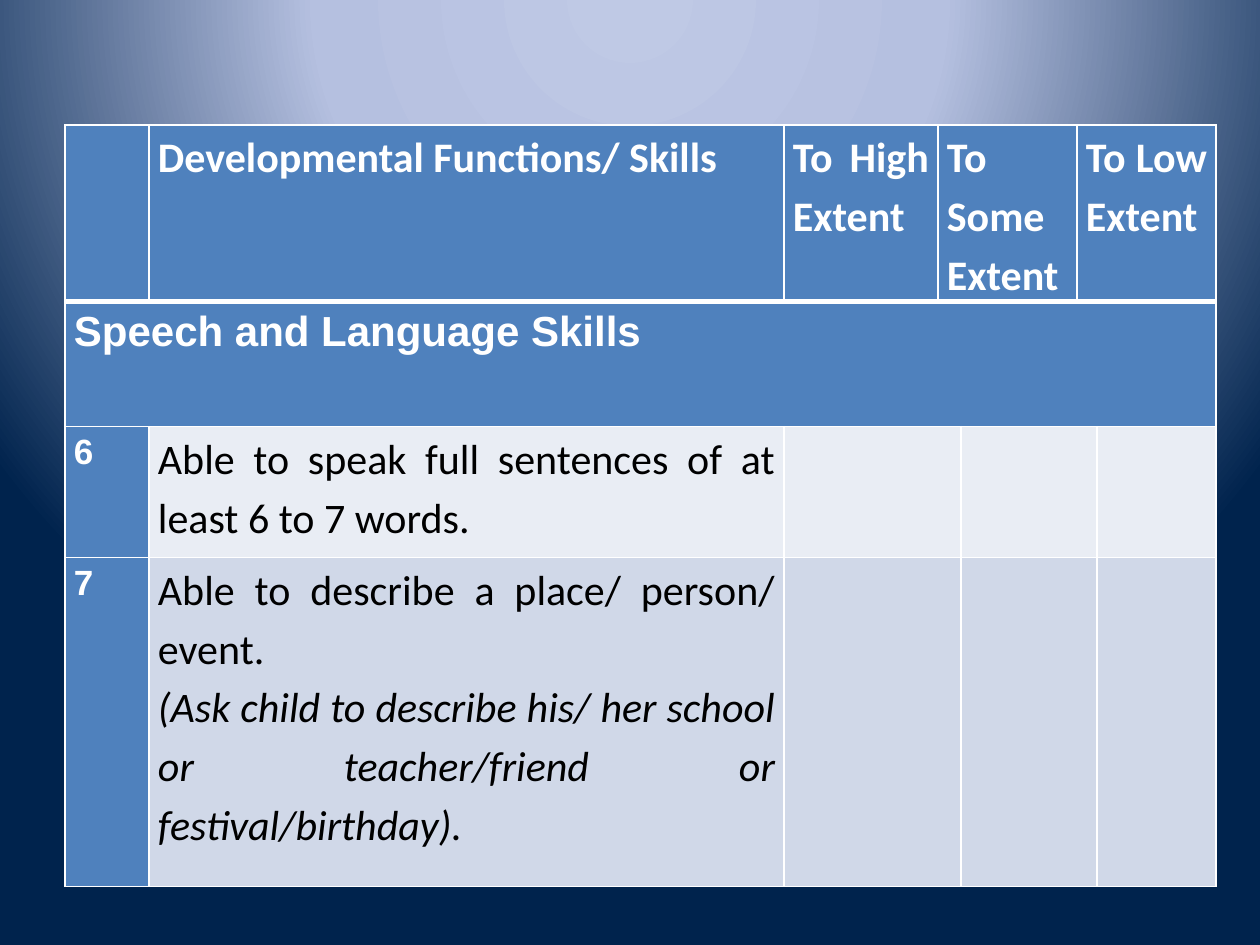
from pptx import Presentation
from pptx import util as u
from pptx.dml.color import RGBColor
from pptx.enum import text
from pptx.oxml import parse_xml
from pptx.oxml.ns import nsdecls

PX = u.Inches(1) / 126
THEME = {
    "white": "FFFFFF", "black": "000000", "blue": "4F81BD",
    "light": "E9EDF4", "mid": "D0D8E8",
    "glow": [(0, "BFC9E5"), (40, "B5C0E0"), (100, "00234D")],
    "body": 24, "number": 20, "thin": 1, "thick": 3,
}


def px(length):
    return u.Emu(round(length * PX))


def write(cell, *lines, size=THEME["body"], font="Calibri", color=THEME["white"],
          bold=True, italic_from=None):
    frame = cell.text_frame
    for number, line in enumerate(lines):
        paragraph = frame.add_paragraph() if number else frame.paragraphs[0]
        paragraph.alignment = text.PP_ALIGN.JUSTIFY
        paragraph.line_spacing = 1.15
        run = paragraph.add_run()
        run.text = line
        run.font.size = u.Pt(size)
        run.font.name = font
        run.font.bold = bold
        run.font.italic = italic_from is not None and number >= italic_from
        run.font.color.rgb = RGBColor.from_string(color)


deck = Presentation()
deck.slide_width, deck.slide_height = px(1260), px(945)
slide = deck.slides.add_slide(deck.slide_layouts[6])

stops = "".join(
    f'<a:gs pos="{place * 1000}"><a:srgbClr val="{color}"/></a:gs>'
    for place, color in THEME["glow"])
backdrop = parse_xml(
    f'<p:bg {nsdecls("p", "a")}><p:bgPr><a:gradFill rotWithShape="1">'
    f'<a:gsLst>{stops}</a:gsLst><a:path path="circle">'
    '<a:fillToRect l="50000" t="-80000" r="50000" b="180000"/></a:path>'
    '</a:gradFill><a:effectLst/></p:bgPr></p:bg>')
slide.element.cSld.insert(0, backdrop)

widths = [84, 635, 154, 23, 116, 20, 119]
heights = [165, 125, 131, 329]
checklist = slide.shapes.add_table(
    len(heights), len(widths), px(65), px(125),
    px(sum(widths)), px(sum(heights))).table
for column, width in zip(checklist.columns, widths):
    column.width = px(width)
for row, height in zip(checklist.rows, heights):
    row.height = px(height)

body_fills = {2: THEME["light"], 3: THEME["mid"]}
for r in range(len(heights)):
    for c in range(len(widths)):
        cell = checklist.cell(r, c)
        cell.margin_left = cell.margin_right = px(9)
        cell.margin_top = cell.margin_bottom = 0
        cell.fill.solid()
        fill = body_fills.get(r, THEME["blue"]) if c else THEME["blue"]
        cell.fill.fore_color.rgb = RGBColor.from_string(fill)
        properties = cell._tc.get_or_add_tcPr()
        for position, side in enumerate("LRTB"):
            header_edge = (r, side) in [(0, "B"), (1, "T")]
            weight = u.Pt(THEME["thick" if header_edge else "thin"])
            properties.insert(position, parse_xml(
                f'<a:ln{side} {nsdecls("a")} w="{weight}"><a:solidFill>'
                f'<a:srgbClr val="{THEME["white"]}"/></a:solidFill></a:ln{side}>'))

merges = [(0, 3, 4), (0, 5, 6), (1, 0, 6)]
merges += [(r, first, first + 1) for r in body_fills for first in (2, 4)]
for r, first, last in merges:
    checklist.cell(r, first).merge(checklist.cell(r, last))

headings = {1: "Developmental Functions/ Skills", 2: "To High Extent",
            3: "To Some Extent", 5: "To Low Extent"}
for c, heading in headings.items():
    write(checklist.cell(0, c), heading)
write(checklist.cell(1, 0), "Speech and Language Skills", font="Arial")

skills = [
    ("6", ["Able to speak full sentences of at least 6 to 7 words."]),
    ("7", ["Able to describe a place/ person/ event.",
           "(Ask child to describe his/ her school or teacher/friend or festival/birthday)."]),
]
for r, (number, lines) in enumerate(skills, start=2):
    write(checklist.cell(r, 0), number, size=THEME["number"], font="Arial")
    write(checklist.cell(r, 1), *lines, color=THEME["black"], bold=False, italic_from=1)

deck.save("out.pptx")
